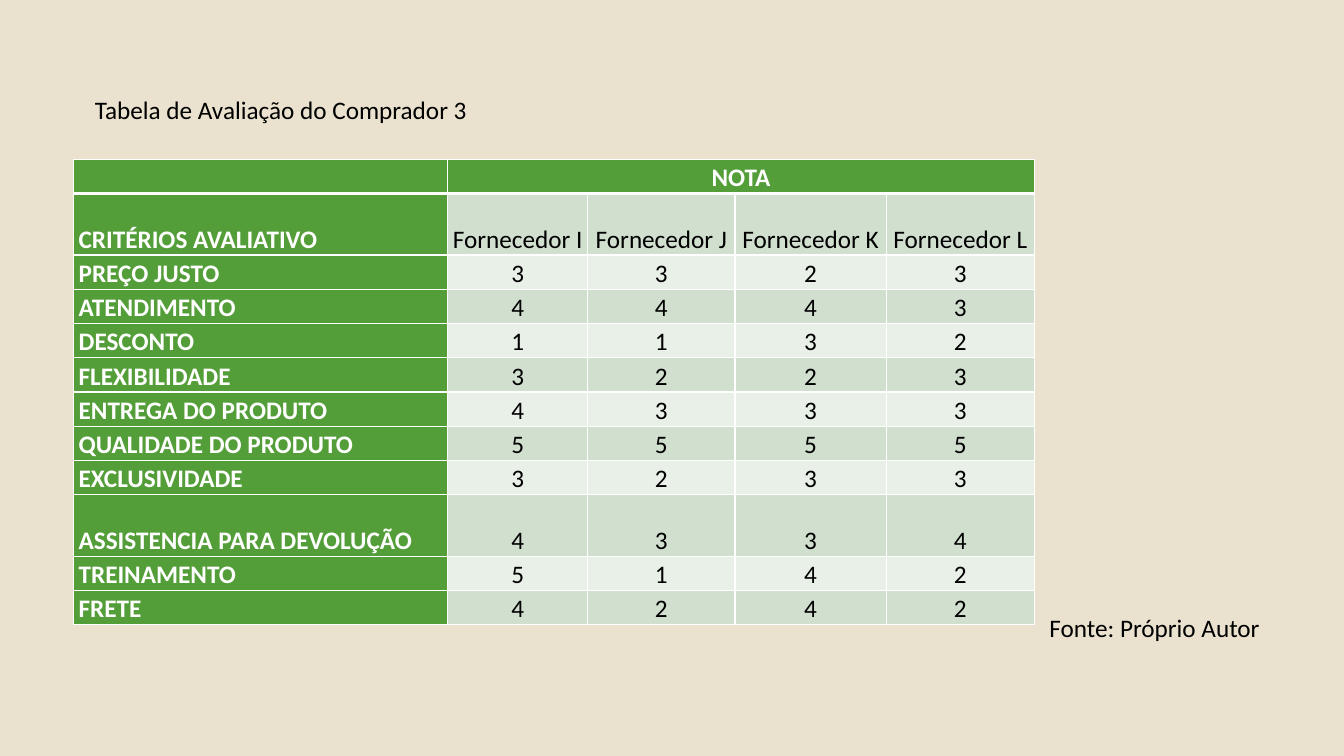
from dataclasses import dataclass

from lxml import etree
from pptx import Presentation
from pptx import util as u
from pptx.dml.color import RGBColor
from pptx.enum import text
from pptx.oxml import ns

FONT = "Calibri"
SIZE = 18
COLORS = {
    "background": "EAE2CE",
    "green": "549E39",
    "dark_band": "D1DFCE",
    "light_band": "E9F0E8",
    "white": "FFFFFF",
    "black": "000000",
}
COL_WIDTHS = (3.71, 1.39, 1.46, 1.5, 1.47)
ROW_HEIGHT, TALL_ROW_HEIGHT = 0.34, 0.61


@dataclass(frozen=True)
class Row:
    label: str
    values: tuple
    tall: bool = False


@dataclass(frozen=True)
class Caption:
    words: str
    left: float
    top: float
    width: float
    height: float


ROWS = (
    Row("", ("NOTA", "", "", "")),
    Row("CRITÉRIOS AVALIATIVO", tuple(f"Fornecedor {x}" for x in "IJKL"), tall=True),
    Row("PREÇO JUSTO", (3, 3, 2, 3)),
    Row("ATENDIMENTO", (4, 4, 4, 3)),
    Row("DESCONTO", (1, 1, 3, 2)),
    Row("FLEXIBILIDADE", (3, 2, 2, 3)),
    Row("ENTREGA DO PRODUTO", (4, 3, 3, 3)),
    Row("QUALIDADE DO PRODUTO", (5, 5, 5, 5)),
    Row("EXCLUSIVIDADE", (3, 2, 3, 3)),
    Row("ASSISTENCIA PARA DEVOLUÇÃO", (4, 3, 3, 4), tall=True),
    Row("TREINAMENTO", (5, 1, 4, 2)),
    Row("FRETE", (4, 2, 4, 2)),
)
HEADING = Caption("Tabela de Avaliação do Comprador 3", 0.84, 0.89, 8.97, 0.4)
SOURCE = Caption("Fonte: Próprio Autor", 10.31, 6.03, 2.55, 0.71)


def rgb(name: str) -> RGBColor:
    return RGBColor.from_string(COLORS[name])


def style_text(p, color: str, bold: bool, align) -> None:
    p.alignment = align
    for font in (p.font, *(r.font for r in p.runs)):
        font.name, font.size, font.bold = FONT, u.Pt(SIZE), bold
        font.color.rgb = rgb(color)


def fill_caption(sp, caption: Caption) -> None:
    sp.left, sp.top = u.Inches(caption.left), u.Inches(caption.top)
    sp.width, sp.height = u.Inches(caption.width), u.Inches(caption.height)
    tf = sp.text_frame
    tf.text = caption.words
    tf.word_wrap = True
    tf.auto_size = text.MSO_AUTO_SIZE.NONE
    tf.vertical_anchor = text.MSO_ANCHOR.TOP
    style_text(tf.paragraphs[0], "black", False, text.PP_ALIGN.LEFT)


def add_borders(cell, top: float, bottom: float) -> None:
    tc_pr = cell._tc.get_or_add_tcPr()
    for side, points in (("L", 1), ("R", 1), ("T", top), ("B", bottom)):
        ln = etree.SubElement(tc_pr, ns.qn(f"a:ln{side}"), w=str(u.Pt(points)))
        fill = etree.SubElement(ln, ns.qn("a:solidFill"))
        etree.SubElement(fill, ns.qn("a:srgbClr"), val=COLORS["white"])


def fill_cell(cell, words: str, row: int, col: int) -> None:
    heading = row == 0 or col == 0
    add_borders(cell, top=3 if row == 1 else 1, bottom=3 if row == 0 else 1)
    band = "dark_band" if row % 2 else "light_band"
    cell.fill.solid()
    cell.fill.fore_color.rgb = rgb("green" if heading else band)
    cell.margin_left = cell.margin_right = u.Inches(0.05)
    cell.margin_top = cell.margin_bottom = 0
    cell.vertical_anchor = text.MSO_ANCHOR.BOTTOM
    cell.text_frame.text = words
    align = text.PP_ALIGN.CENTER if col else text.PP_ALIGN.LEFT
    style_text(cell.text_frame.paragraphs[0], "white" if heading else "black", heading, align)


def add_scores(s) -> None:
    heights = [TALL_ROW_HEIGHT if row.tall else ROW_HEIGHT for row in ROWS]
    table = s.shapes.add_table(
        len(ROWS), len(COL_WIDTHS), u.Inches(0.73), u.Inches(1.58),
        u.Inches(sum(COL_WIDTHS)), u.Inches(sum(heights)),
    ).table
    table.horz_banding = False
    for column, width in zip(table.columns, COL_WIDTHS):
        column.width = u.Inches(width)
    for i, (row, height) in enumerate(zip(ROWS, heights)):
        table.rows[i].height = u.Inches(height)
        for j, value in enumerate((row.label, *row.values)):
            fill_cell(table.cell(i, j), str(value), i, j)
    table.cell(0, 1).merge(table.cell(0, len(COL_WIDTHS) - 1))


def main() -> None:
    prs = Presentation()
    prs.slide_width, prs.slide_height = u.Inches(13.33), u.Inches(7.5)
    s = prs.slides.add_slide(prs.slide_layouts[5])
    s.background.fill.solid()
    s.background.fill.fore_color.rgb = rgb("background")

    # Heading, score table and source note
    fill_caption(s.shapes.title, HEADING)
    add_scores(s)
    fill_caption(s.shapes.add_textbox(0, 0, 0, 0), SOURCE)

    prs.save("out.pptx")


if __name__ == "__main__":
    main()
